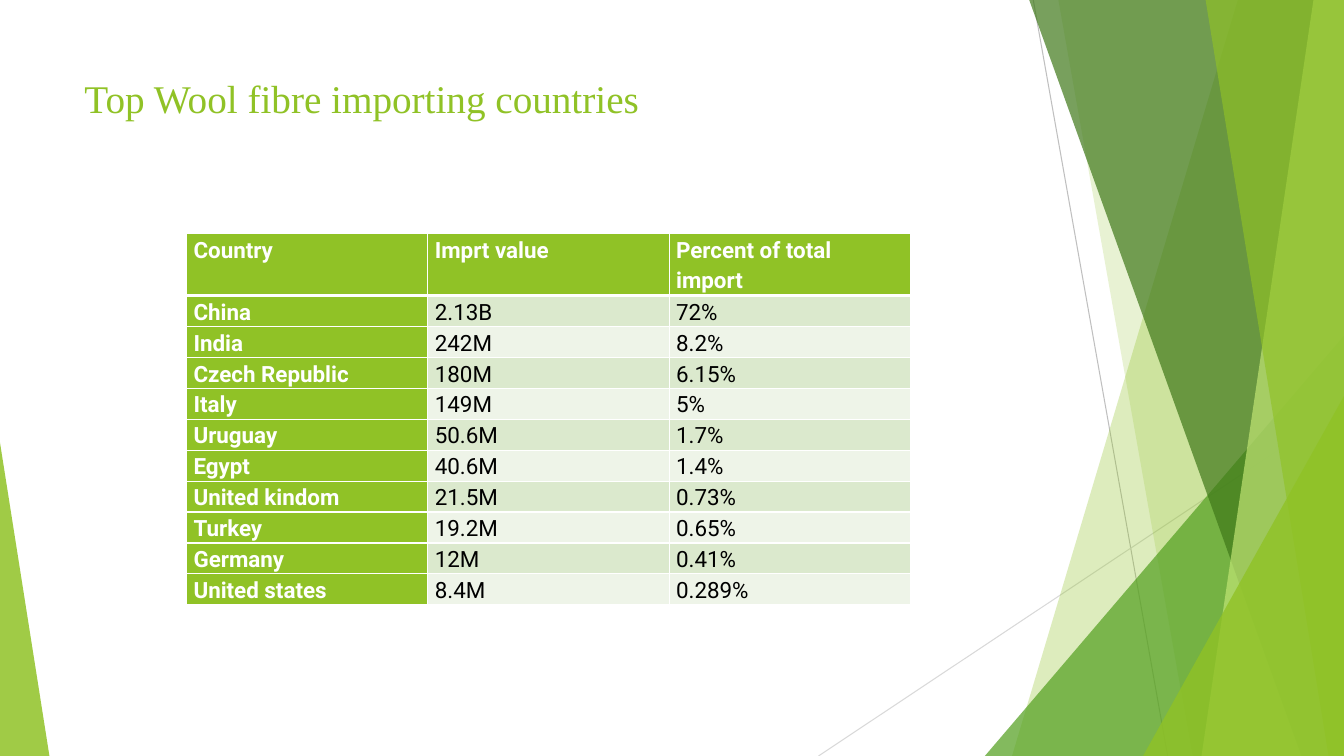
from dataclasses import dataclass

from lxml import etree
from pptx import Presentation
from pptx.dml.color import RGBColor
from pptx.enum.shapes import MSO_CONNECTOR, MSO_SHAPE
from pptx.enum.text import MSO_ANCHOR
from pptx.oxml.ns import qn
from pptx.util import Inches, Pt

STRAIGHT = MSO_CONNECTOR.STRAIGHT
TRIANGLE = MSO_SHAPE.ISOSCELES_TRIANGLE
MIDDLE = MSO_ANCHOR.MIDDLE

SLIDE_WIDTH = Inches(13.33)
SLIDE_HEIGHT = Inches(7.5)

GREEN = "90C226"
WHITE = "FFFFFF"
BLACK = "000000"
BAND_FILLS = ("DBE9CD", "EEF4E8")


# Positions and sizes are percentages of the slide's width or height.
@dataclass(frozen=True)
class Ray:
    start: tuple[float, float]
    end: tuple[float, float]
    color: str


@dataclass(frozen=True)
class Facet:
    """A full-height panel reaching the right edge."""
    top_left: float
    bottom_left: float
    color: str
    opacity: int


@dataclass(frozen=True)
class Corner:
    """A triangle standing on the bottom edge; apex 0 is left, 1 is right."""
    left: float
    right: float
    top: float
    apex: int
    color: str
    opacity: int


RAYS = (
    Ray((76.88, 0), (86.88, 100), "BFBFBF"),
    Ray((100, 53.73), (60.9, 100), "D9D9D9"),
)
PANELS = (
    Facet(92.1, 75.3, GREEN, 30),
    Facet(78.75, 88.73, GREEN, 20),
    Corner(73.28, 100, 44.4, 1, "54A021", 72),
    Facet(76.58, 96.83, "3F7819", 70),
    Facet(97.73, 89.4, "C0E474", 70),
    Facet(89.7, 98.85, GREEN, 65),
    Corner(85.05, 100, 52.4, 1, GREEN, 80),
    Corner(0, 3.68, 58.53, 0, GREEN, 85),
)

TITLE_BOX = (5.55, 8.93, 70.5, 8)
TABLE_BOX = (13.88, 30.93, 53.86, 48.67)
HEADER_HEIGHT = 7.87
IMPORTS = (
    ("Country", "Imprt value", "Percent of total import"),
    ("China", "2.13B", "72%"),
    ("India", "242M", "8.2%"),
    ("Czech Republic", "180M", "6.15%"),
    ("Italy", "149M", "5%"),
    ("Uruguay", "50.6M", "1.7%"),
    ("Egypt", "40.6M", "1.4%"),
    ("United kindom", "21.5M", "0.73%"),
    ("Turkey", "19.2M", "0.65%"),
    ("Germany", "12M", "0.41%"),
    ("United states", "8.4M", "0.289%"),
)


def across(percent: float) -> int:
    return round(SLIDE_WIDTH * percent / 100)


def down(percent: float) -> int:
    return round(SLIDE_HEIGHT * percent / 100)


def place(box: tuple) -> tuple:
    left, top, width, height = box
    return across(left), down(top), across(width), down(height)


def rgb(color: str) -> RGBColor:
    return RGBColor.from_string(color)


def style_text(paragraph, font_name: str, size: int, color: str, bold: bool) -> None:
    for run in paragraph.runs:
        run.font.name = font_name
        run.font.size = Pt(size)
        run.font.bold = bold
        run.font.color.rgb = rgb(color)


def draw_ray(slide, ray: Ray) -> None:
    connector = slide.shapes.add_connector(
        STRAIGHT, across(ray.start[0]), down(ray.start[1]),
        across(ray.end[0]), down(ray.end[1]))
    connector.line.color.rgb = rgb(ray.color)
    connector.line.width = Pt(0.75)
    etree.SubElement(connector._element.spPr, qn("a:effectLst"))


def draw_panel(slide, panel: Facet | Corner) -> None:
    if isinstance(panel, Facet):
        builder = slide.shapes.build_freeform(across(panel.top_left), 0, scale=1.0)
        builder.add_line_segments([
            (SLIDE_WIDTH, 0), (SLIDE_WIDTH, SLIDE_HEIGHT),
            (across(panel.bottom_left), SLIDE_HEIGHT)], close=True)
        shape = builder.convert_to_shape()
    else:
        box = (panel.left, panel.top, panel.right - panel.left, 100 - panel.top)
        shape = slide.shapes.add_shape(TRIANGLE, *place(box))
        shape.adjustments[0] = panel.apex
    shape.shadow.inherit = False
    shape.line.fill.background()
    shape.fill.solid()
    shape.fill.fore_color.rgb = rgb(panel.color)
    color_element = shape._element.spPr.find(qn("a:solidFill"))[0]
    etree.SubElement(color_element, qn("a:alpha"), val=str(panel.opacity * 1000))


def draw_title(slide, text: str) -> None:
    text_frame = slide.shapes.add_textbox(*place(TITLE_BOX)).text_frame
    text_frame.word_wrap = True
    text_frame.vertical_anchor = MIDDLE
    text_frame.text = text
    style_text(text_frame.paragraphs[0], "Times New Roman", 28, GREEN, False)


def add_borders(cell, bottom_width: int) -> None:
    properties = cell._tc.get_or_add_tcPr()
    widths = {"a:lnL": 1, "a:lnR": 1, "a:lnT": 1, "a:lnB": bottom_width}
    for tag, width in widths.items():
        border = etree.SubElement(properties, qn(tag), w=str(Pt(width)))
        fill = etree.SubElement(border, qn("a:solidFill"))
        etree.SubElement(fill, qn("a:srgbClr"), val=WHITE)


def fill_cell(cell, text: str, row: int, column: int) -> None:
    is_heading = row == 0 or column == 0
    cell.margin_left = cell.margin_right = Inches(0.07)
    cell.margin_top = cell.margin_bottom = 0
    add_borders(cell, 3 if row == 0 else 1)
    cell.fill.solid()
    cell.fill.fore_color.rgb = rgb(GREEN if is_heading else BAND_FILLS[(row - 1) % 2])
    cell.text_frame.text = text
    paragraph = cell.text_frame.paragraphs[0]
    paragraph.line_spacing = 1.15
    style_text(paragraph, "Roboto", 16, WHITE if is_heading else BLACK, is_heading)


def draw_table(slide) -> None:
    table = slide.shapes.add_table(
        len(IMPORTS), len(IMPORTS[0]), *place(TABLE_BOX)).table
    table.first_row = table.horz_banding = False
    body_height = (TABLE_BOX[3] - HEADER_HEIGHT) / (len(IMPORTS) - 1)
    for row, values in enumerate(IMPORTS):
        table.rows[row].height = down(body_height if row else HEADER_HEIGHT)
        for column, text in enumerate(values):
            fill_cell(table.cell(row, column), text, row, column)


def main() -> None:
    presentation = Presentation()
    presentation.slide_width = SLIDE_WIDTH
    presentation.slide_height = SLIDE_HEIGHT
    slide = presentation.slides.add_slide(presentation.slide_layouts[6])

    # Faceted backdrop
    for ray in RAYS:
        draw_ray(slide, ray)
    for panel in PANELS:
        draw_panel(slide, panel)

    # Content
    draw_title(slide, "Top Wool fibre importing countries")
    draw_table(slide)
    presentation.save("out.pptx")


if __name__ == "__main__":
    main()
